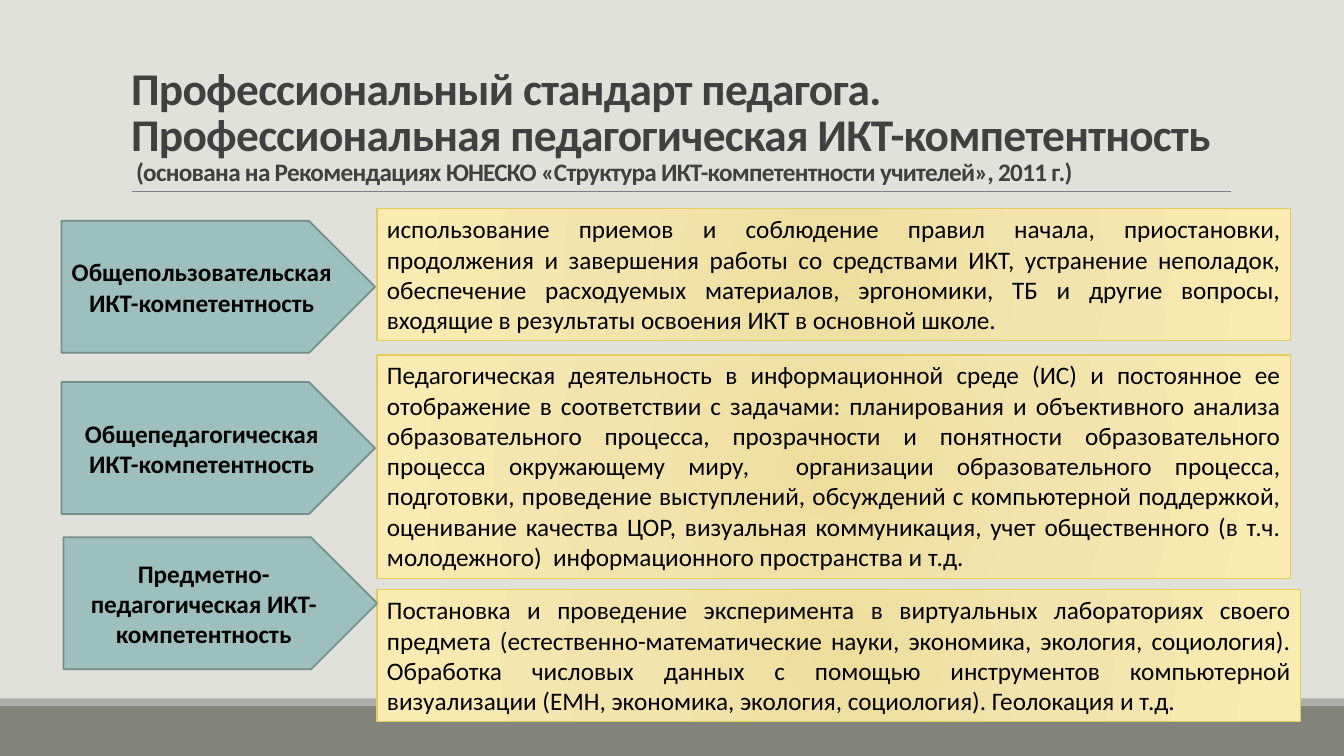
from copy import deepcopy

from pptx import Presentation
from pptx.dml.color import RGBColor
from pptx.enum.shapes import MSO_CONNECTOR, MSO_SHAPE
from pptx.enum.text import MSO_ANCHOR, MSO_AUTO_SIZE, PP_ALIGN
from pptx.oxml import parse_xml
from pptx.oxml.ns import nsdecls, qn
from pptx.util import Pt
from lxml import etree

PX = 9144  # 100 px to the inch
FONT = "Calibri"
RECT, ARROW = MSO_SHAPE.RECTANGLE, MSO_SHAPE.PENTAGON
STRAIGHT = MSO_CONNECTOR.STRAIGHT
TOP, MIDDLE, BOTTOM = MSO_ANCHOR.TOP, MSO_ANCHOR.MIDDLE, MSO_ANCHOR.BOTTOM
LEFT, CENTER, JUSTIFY = PP_ALIGN.LEFT, PP_ALIGN.CENTER, PP_ALIGN.JUSTIFY
NO_FIT = MSO_AUTO_SIZE.NONE

WIDTH, HEIGHT = 1333, 750
HEADING = [
    ("Профессиональный стандарт педагога. ", 32.4),
    ("Профессиональная педагогическая ИКТ-компетентность", 32.4),
    (" (основана на Рекомендациях ЮНЕСКО «Структура ИКТ-компетентности учителей», 2011 г.)", 18),
]
# Competence, its arrow (left, top), its description, description box (top, width, height)
COMPETENCES = [
    ("Общепользовательская ИКТ-компетентность", (61, 219),
     "использование приемов и соблюдение правил начала, приостановки, продолжения и "
     "завершения работы со средствами ИКТ, устранение неполадок, обеспечение расходуемых "
     "материалов, эргономики, ТБ и другие вопросы, входящие в результаты освоения ИКТ в "
     "основной школе.", (207, 906, 131)),
    ("Общепедагогическая ИКТ-компетентность", (61, 379),
     "Педагогическая деятельность в информационной среде (ИС) и постоянное ее отображение "
     "в соответствии с задачами: планирования и объективного анализа образовательного "
     "процесса, прозрачности и понятности образовательного процесса окружающему миру,  "
     "организации образовательного процесса, подготовки, проведение выступлений, обсуждений "
     "с компьютерной поддержкой, оценивание качества ЦОР, визуальная коммуникация, учет "
     "общественного (в т.ч. молодежного)  информационного пространства и т.д.",
     (352, 906, 222)),
    ("Предметно-педагогическая ИКТ-компетентность", (63, 533),
     "Постановка и проведение эксперимента в виртуальных лабораториях своего предмета "
     "(естественно-математические науки, экономика, экология, социология). Обработка "
     "числовых данных с помощью инструментов компьютерной визуализации (ЕМН, экономика, "
     "экология, социология). Геолокация и т.д.", (585, 916, 131)),
]


def color(hex_string):
    return RGBColor.from_string(hex_string)


def emu(*lengths):
    return [length * PX for length in lengths]


def add_block(slide, kind, box, fill, line=None, line_width=1):
    block = slide.shapes.add_shape(kind, *emu(*box))
    block.shadow.inherit = False
    block.fill.solid()
    block.fill.fore_color.rgb = color(fill)
    if line:
        block.line.color.rgb = color(line)
        block.line.width = Pt(line_width)
    else:
        block.line.fill.background()
    return block


def write(block, text, align, anchor, bold=False):
    frame = block.text_frame
    frame.word_wrap = True
    frame.vertical_anchor = anchor
    paragraph = frame.paragraphs[0]
    paragraph.text = text
    paragraph.alignment = align
    font = paragraph.font
    font.name, font.size, font.bold = FONT, Pt(18), bold
    font.color.rgb = color("000000")


def fill_radial(block, stops):
    """Swap the solid fill for a circular gradient."""
    marks = "".join(
        f'<a:gs pos="{percent * 1000}"><a:srgbClr val="{tint}"/></a:gs>'
        for percent, tint in stops)
    gradient = parse_xml(
        f'<a:gradFill {nsdecls("a")} rotWithShape="1"><a:gsLst>{marks}</a:gsLst>'
        '<a:path path="circle"><a:fillToRect l="100000" t="100000" r="100000" b="100000"/>'
        '</a:path></a:gradFill>')
    properties = block._element.spPr
    properties.replace(properties.find(qn("a:solidFill")), gradient)


def add_backdrop(slide, width, height):
    slide.background.fill.solid()
    slide.background.fill.fore_color.rgb = color("E1E1DB")
    add_block(slide, RECT, (0, height - 50, width, 50), "82847C")
    add_block(slide, RECT, (0, height - 57, width, 7), "ACADA8")


def add_heading(slide, box):
    left, top, width, height = box
    title = slide.shapes.title
    title.left, title.top, title.width, title.height = emu(*box)
    frame = title.text_frame
    frame.word_wrap, frame.auto_size, frame.vertical_anchor = True, NO_FIT, BOTTOM
    paragraph = frame.paragraphs[0]
    paragraph.alignment, paragraph.line_spacing = LEFT, 0.85
    for index, (text, size) in enumerate(HEADING):
        if index:
            paragraph.add_line_break()
            # The break keeps the type size of the line it ends
            paragraph._p[-1].append(deepcopy(run.font._element))
        run = paragraph.add_run()
        run.text = text
        run.font.name, run.font.size, run.font.bold = FONT, Pt(size), True
        run.font.color.rgb = color("404040")
        run.font._element.set("spc", "-50")

    # Rule under the heading
    base = top + height
    rule = slide.shapes.add_connector(STRAIGHT, *emu(left + 11, base, left + width + 1, base))
    rule.line.color.rgb = color("808080")
    rule.line.width = Pt(0.5)
    etree.SubElement(rule._element.spPr, qn("a:effectLst"))


def add_competence(slide, name, arrow_at, description, description_box):
    top, width, height = description_box
    details = add_block(slide, RECT, (374, top, width, height), "F3E4AE", "E3CC5A")
    fill_radial(details, [(0, "EEDD9D"), (45, "F3E4AE"), (100, "FAEBB2")])
    write(details, description, JUSTIFY, TOP)
    arrow = add_block(slide, ARROW, (*arrow_at, 311, 131), "9DBFBE", "748D8D", 1.25)
    write(arrow, name, CENTER, MIDDLE, bold=True)


def main():
    deck = Presentation()
    deck.slide_width, deck.slide_height = emu(WIDTH, HEIGHT)
    slide = deck.slides.add_slide(deck.slide_layouts[5])
    add_backdrop(slide, WIDTH, HEIGHT)
    add_heading(slide, (120, 31, 1100, 159))
    for competence in COMPETENCES:
        add_competence(slide, *competence)
    deck.save("out.pptx")


if __name__ == "__main__":
    main()
